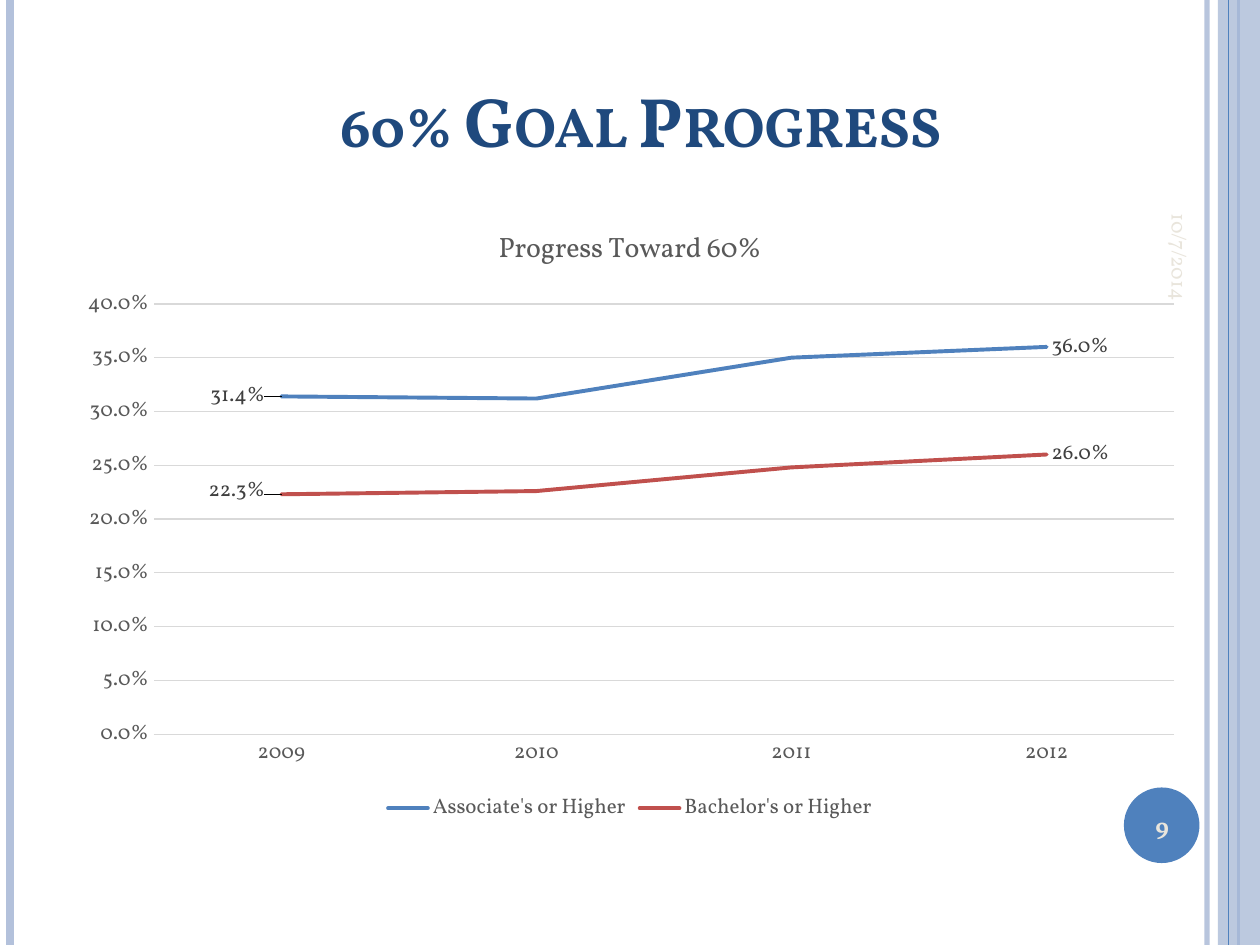
from lxml.etree import SubElement
from pptx import Presentation
from pptx.chart.data import CategoryChartData
from pptx.dml.color import RGBColor
from pptx.enum.chart import XL_CHART_TYPE as ChartType
from pptx.enum.chart import XL_LABEL_POSITION as LabelPos
from pptx.enum.chart import XL_LEGEND_POSITION as LegendPos
from pptx.enum.chart import XL_MARKER_STYLE as Marker
from pptx.enum.chart import XL_TICK_MARK as Tick
from pptx.enum.shapes import MSO_CONNECTOR as Connector
from pptx.enum.shapes import MSO_SHAPE as Shape
from pptx.enum.text import MSO_ANCHOR as Anchor
from pptx.enum.text import PP_ALIGN as Align
from pptx.oxml import parse_xml
from pptx.oxml.ns import nsdecls, qn
from pptx.util import Pt

FONT = "Vollkorn"
NAVY = RGBColor(0x1F, 0x49, 0x7D)
BLUE = RGBColor(0x4F, 0x81, 0xBD)
RED = RGBColor(0xC0, 0x50, 0x4D)
PALE_BLUE = RGBColor(0xB3, 0xC1, 0xDB)
CREAM = RGBColor(0xE9, 0xE5, 0xDC)
GREY = RGBColor(0x59, 0x59, 0x59)
DARK_GREY = RGBColor(0x40, 0x40, 0x40)
LIGHT_GREY = RGBColor(0xD9, 0xD9, 0xD9)

SLIDE_WIDTH, SLIDE_HEIGHT = 720, 540
YEARS = ["2009", "2010", "2011", "2012"]
# Name, values, colour, and shift of the first label as fractions of the chart
SERIES = [
    ("Associate's or Higher", [0.314, 0.312, 0.35, 0.36], BLUE, (-0.01, 0)),
    ("Bachelor's or Higher", [0.223, 0.226, 0.248, 0.26], RED, (-0.01, -0.005)),
]


def style_font(font, size, color, bold=False):
    font.name, font.size, font.bold = FONT, Pt(size), bold
    font.color.rgb = color


def set_opacity(fill, percent):
    color = fill._xPr.find(qn("a:solidFill"))[0]
    SubElement(color, qn("a:alpha"), val=str(percent * 1000))


def write(frame, text, size, color, bold=False, anchor=Anchor.MIDDLE):
    frame.word_wrap = True
    frame.vertical_anchor = anchor
    para = frame.paragraphs[0]
    para.alignment = Align.CENTER
    span = para.add_run()
    span.text = text
    style_font(span.font, size, color, bold)
    return span


def add_text(page, text, left, top, width, height, size, bold=False, rotation=0):
    box = page.shapes.add_textbox(Pt(left), Pt(top), Pt(width), Pt(height))
    box.rotation = rotation
    write(box.text_frame, text, size, CREAM, bold)


def add_rule(page, x, color, weight, opacity=100):
    rule = page.shapes.add_connector(Connector.STRAIGHT, Pt(x), Pt(0), Pt(x), Pt(SLIDE_HEIGHT))
    rule.line.color.rgb = color
    rule.line.width = Pt(weight)
    if opacity < 100:
        set_opacity(rule.line.fill, opacity)
    SubElement(rule._element.spPr, qn("a:effectLst"))


def add_filled(page, kind, left, top, width, height, color, opacity=100):
    shape = page.shapes.add_shape(kind, Pt(left), Pt(top), Pt(width), Pt(height))
    shape.shadow.inherit = False
    shape.fill.solid()
    shape.fill.fore_color.rgb = color
    if opacity < 100:
        set_opacity(shape.fill, opacity)
    shape.line.fill.background()


def add_title(page, text):
    title = page.shapes.title
    title.left, title.top, title.width, title.height = Pt(72), Pt(6), Pt(588), Pt(90)
    span = write(title.text_frame, text, 40, NAVY, True, Anchor.BOTTOM)
    span._r.get_or_add_rPr().set("cap", "small")


def manual_layout(inner="", **values):
    parts = "".join(f'<c:{name} val="{value}"/>' for name, value in values.items())
    return parse_xml(f'<c:layout {nsdecls("c")}><c:manualLayout>{inner}{parts}'
                     "</c:manualLayout></c:layout>")


def add_label(series, index, position, shift=None):
    label = series.points[index].data_label
    style_font(label.font, 12, DARK_GREY)
    label.position = position
    if shift:
        entry = series._element.find(qn("c:dLbls")).findall(qn("c:dLbl"))[-1]
        entry.find(qn("c:idx")).addnext(manual_layout(x=shift[0], y=shift[1]))


def style_series(series, color, shift):
    series.smooth = False
    series.marker.style = Marker.NONE
    series.format.line.color.rgb = color
    series.format.line.width = Pt(2.25)
    series.format.line._ln.set("cap", "rnd")
    series.data_labels.show_value = False
    add_label(series, 0, LabelPos.LEFT, shift)
    add_label(series, len(YEARS) - 1, LabelPos.RIGHT)


def style_axes(chart):
    years, shares = chart.category_axis, chart.value_axis
    for axis in (years, shares):
        axis.major_tick_mark = axis.minor_tick_mark = Tick.NONE
        style_font(axis.tick_labels.font, 12, GREY)
    shares.minimum_scale, shares.maximum_scale, shares.major_unit = 0, 0.4, 0.05
    shares.tick_labels.number_format = "0.0%"
    shares.tick_labels.number_format_is_linked = False
    shares.format.line.fill.background()
    for line in (years.format.line, shares.major_gridlines.format.line):
        line.color.rgb = LIGHT_GREY
        line.width = Pt(0.75)


def add_progress_chart(page):
    data = CategoryChartData(number_format="0.0%")
    data.categories = YEARS
    for name, values, _, _ in SERIES:
        data.add_series(name, values)
    chart = page.shapes.add_chart(ChartType.LINE, Pt(36), Pt(116.64), Pt(648), Pt(356.4),
                                  data).chart
    style_font(chart.font, 10, GREY)

    # Title and legend
    span = chart.chart_title.text_frame.paragraphs[0].add_run()
    span.text = "Progress Toward 60%"
    style_font(span.font, 16, GREY)
    chart.chart_title.include_in_layout = False
    chart.has_legend = True
    chart.legend.position = LegendPos.BOTTOM
    chart.legend.include_in_layout = False
    style_font(chart.legend.font, 12, GREY)

    # Plot area, axes and lines
    plot_area = chart._chartSpace.chart.plotArea
    for old in plot_area.findall(qn("c:layout")):
        plot_area.remove(old)
    inner = '<c:layoutTarget val="inner"/><c:xMode val="edge"/><c:yMode val="edge"/>'
    plot_area.insert(0, manual_layout(inner, x=0.08, y=0.16, w=0.9, h=0.69))
    style_axes(chart)
    chart.plots[0].vary_by_categories = False
    for series, (_, _, color, shift) in zip(chart.plots[0].series, SERIES):
        style_series(series, color, shift)


def main():
    deck = Presentation()
    deck.slide_width, deck.slide_height = Pt(SLIDE_WIDTH), Pt(SLIDE_HEIGHT)
    page = deck.slides.add_slide(deck.slide_layouts[5])

    # Side bands and number disc
    add_rule(page, 689.76, PALE_BLUE, 3, 93)
    add_rule(page, 5.76, PALE_BLUE, 4.5)
    add_rule(page, 707.76, BLUE, 1.5)
    add_filled(page, Shape.RECTANGLE, 696, 0, 24, SLIDE_HEIGHT, PALE_BLUE, 87)
    add_rule(page, 702, BLUE, 0.75)
    add_filled(page, Shape.OVAL, 642.24, 450, 43.2, 43.2, BLUE)

    # Content
    add_title(page, "60% Goal Progress")
    add_progress_chart(page)
    add_text(page, "10/7/2014", 634.3, 134.9, 80, 24, 12, rotation=90)
    add_text(page, "9", 640, 451.44, 48.24, 41.04, 14, bold=True)

    deck.save("out.pptx")


if __name__ == "__main__":
    main()
